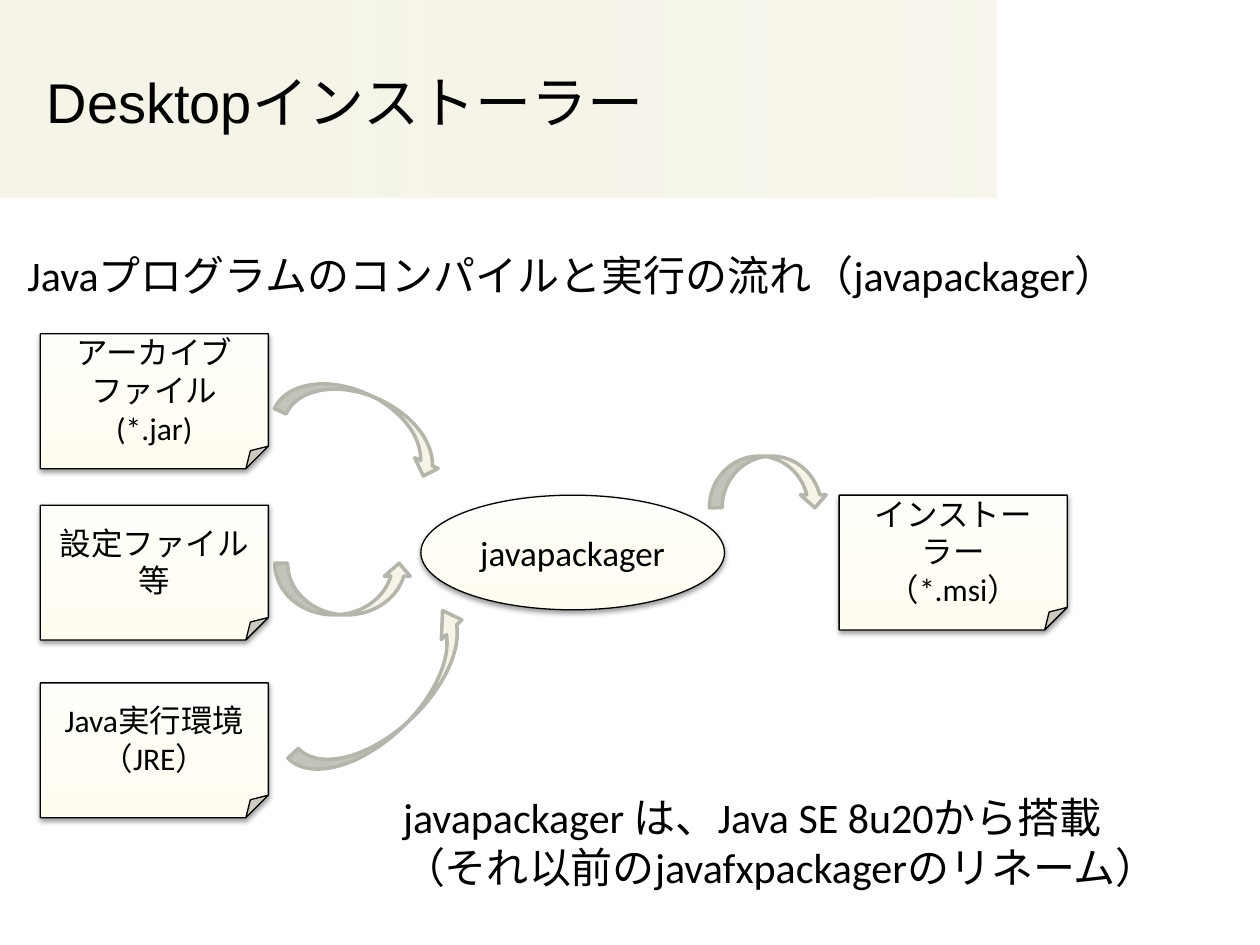
from lxml import etree
from pptx import Presentation
from pptx.dml.color import RGBColor
from pptx.enum import shapes, text
from pptx.oxml.ns import qn
from pptx.util import Inches, Pt

COLORS = {
    "ink": "000000",
    "band": "F6F4E8",
    "arrow_line": "B6B5AC",
    "node_low": "FFFDEF",
    "node_mid": "FFFDF4",
    "node_high": "FFFEFA",
}
BAND_STOPS = [(0, "band", 80), (0, "band", 100), (100, "band", 85)]
NODE_STOPS = [(0, "node_low", 100), (35, "node_mid", 100), (100, "node_high", 100)]
NOTE_SIZE = (1.81, 1.07)
INPUT_LEFT = 0.32


def rgb(name):
    return RGBColor.from_string(COLORS[name])


def add_color(parent, name, alpha):
    color = etree.SubElement(parent, qn("a:srgbClr"), val=COLORS[name])
    if alpha < 100:
        etree.SubElement(color, qn("a:alpha"), val=str(alpha * 1000))


def set_gradient(shape, stops, angle):
    """Fill with (position %, colour name, opacity %) stops, angle clockwise."""
    shape.fill.gradient()
    gradient = shape._element.spPr.find(qn("a:gradFill"))
    for child in list(gradient):
        gradient.remove(child)
    stop_list = etree.SubElement(gradient, qn("a:gsLst"))
    for position, name, alpha in stops:
        stop = etree.SubElement(stop_list, qn("a:gs"), pos=str(position * 1000))
        add_color(stop, name, alpha)
    etree.SubElement(gradient, qn("a:lin"), ang=str(angle * 60000), scaled="0")


def add_soft_shadow(shape):
    effects = shape._element.spPr.find(qn("a:effectLst"))
    shadow = etree.SubElement(
        effects, qn("a:outerShdw"), blurRad=str(Pt(3.1)), dist=str(Pt(1.6)),
        dir=str(90 * 60000), rotWithShape="0")
    add_color(shadow, "ink", 38)


def write_lines(frame, lines, size, align, font="Calibri"):
    for index, line in enumerate(lines):
        paragraph = frame.paragraphs[0] if index == 0 else frame.add_paragraph()
        paragraph.alignment = align
        run = paragraph.add_run()
        run.text = line
        run.font.size = Pt(size)
        run.font.name = font
        run.font.color.rgb = rgb("ink")


def add_plain_shape(slide, kind, left, top, width, height):
    shape = slide.shapes.add_shape(
        kind, Inches(left), Inches(top), Inches(width), Inches(height))
    shape.shadow.inherit = False
    return shape


def add_title(slide, wording):
    band = add_plain_shape(slide, shapes.MSO_SHAPE.RECTANGLE, 0, 0, 7.91, 1.57)
    set_gradient(band, BAND_STOPS, 0)
    band.line.fill.background()
    slide.shapes._spTree.insert(2, band._element)  # behind the title

    title = slide.shapes.title
    title.left, title.top = Inches(0.27), Inches(0.3)
    title.width, title.height = Inches(7.48), Inches(1.01)
    title.text_frame.vertical_anchor = text.MSO_ANCHOR.MIDDLE
    write_lines(title.text_frame, [wording], 32, text.PP_ALIGN.LEFT, "Arial")


def add_node(slide, kind, left, top, size, lines, font_size):
    node = add_plain_shape(slide, kind, left, top, *size)
    set_gradient(node, NODE_STOPS, 270)
    node.line.color.rgb = rgb("ink")
    node.line.width = Pt(0.75)
    add_soft_shadow(node)
    node.text_frame.word_wrap = True
    node.text_frame.vertical_anchor = text.MSO_ANCHOR.MIDDLE
    write_lines(node.text_frame, lines, font_size, text.PP_ALIGN.CENTER)


def add_file_note(slide, left, top, lines):
    add_node(slide, shapes.MSO_SHAPE.FOLDED_CORNER, left, top, NOTE_SIZE, lines, 18)


def add_flow_arrow(slide, box, rotation=0, flipped=False, head=None):
    arrow = add_plain_shape(slide, shapes.MSO_SHAPE.CURVED_DOWN_ARROW, *box)
    arrow.rotation = rotation
    if flipped:
        arrow._element.spPr.find(qn("a:xfrm")).set("flipH", "1")
    if head is not None:
        arrow.adjustments[2] = head
    arrow.fill.solid()
    arrow.fill.fore_color.rgb = rgb("band")
    arrow.line.color.rgb = rgb("arrow_line")
    arrow.line.width = Pt(2)


def add_caption(slide, left, top, width, height, lines):
    caption = slide.shapes.add_textbox(
        Inches(left), Inches(top), Inches(width), Inches(height))
    caption.text_frame.word_wrap = True
    caption.text_frame.auto_size = text.MSO_AUTO_SIZE.SHAPE_TO_FIT_TEXT
    write_lines(caption.text_frame, lines, 24, text.PP_ALIGN.LEFT)


def main():
    deck = Presentation()
    deck.slide_width, deck.slide_height = Inches(10), Inches(7.5)
    slide = deck.slides.add_slide(deck.slide_layouts[5])

    add_title(slide, "Desktopインストーラー")
    add_caption(slide, 0.12, 1.93, 9.76, 0.5,
                ["Javaプログラムのコンパイルと実行の流れ（javapackager）"])

    add_node(slide, shapes.MSO_SHAPE.OVAL, 3.34, 3.93, (2.41, 0.91),
             ["javapackager"], 20)
    inputs = [
        (2.65, ["アーカイブ", "ファイル", "(*.jar)"]),
        (4.01, ["設定ファイル等"]),
        (5.42, ["Java実行環境", "（JRE）"]),
    ]
    for top, lines in inputs:
        add_file_note(slide, INPUT_LEFT, top, lines)
    add_file_note(slide, 6.66, 3.93, ["インストーラー", "（*.msi）"])

    add_flow_arrow(slide, (2.2, 3.14, 1.4, 0.41), rotation=24.3)
    add_flow_arrow(slide, (2.18, 4.47, 1.09, 0.41), rotation=180, flipped=True)
    add_flow_arrow(slide, (2.19, 5.33, 1.81, 0.45), rotation=136.3, flipped=True,
                   head=0.355)
    add_flow_arrow(slide, (5.63, 3.62, 0.94, 0.41))

    add_caption(slide, 3.1, 6.23, 6.58, 0.91,
                ["javapackager は、Java SE 8u20から搭載",
                 "（それ以前のjavafxpackagerのリネーム）"])
    deck.save("out.pptx")


if __name__ == "__main__":
    main()
